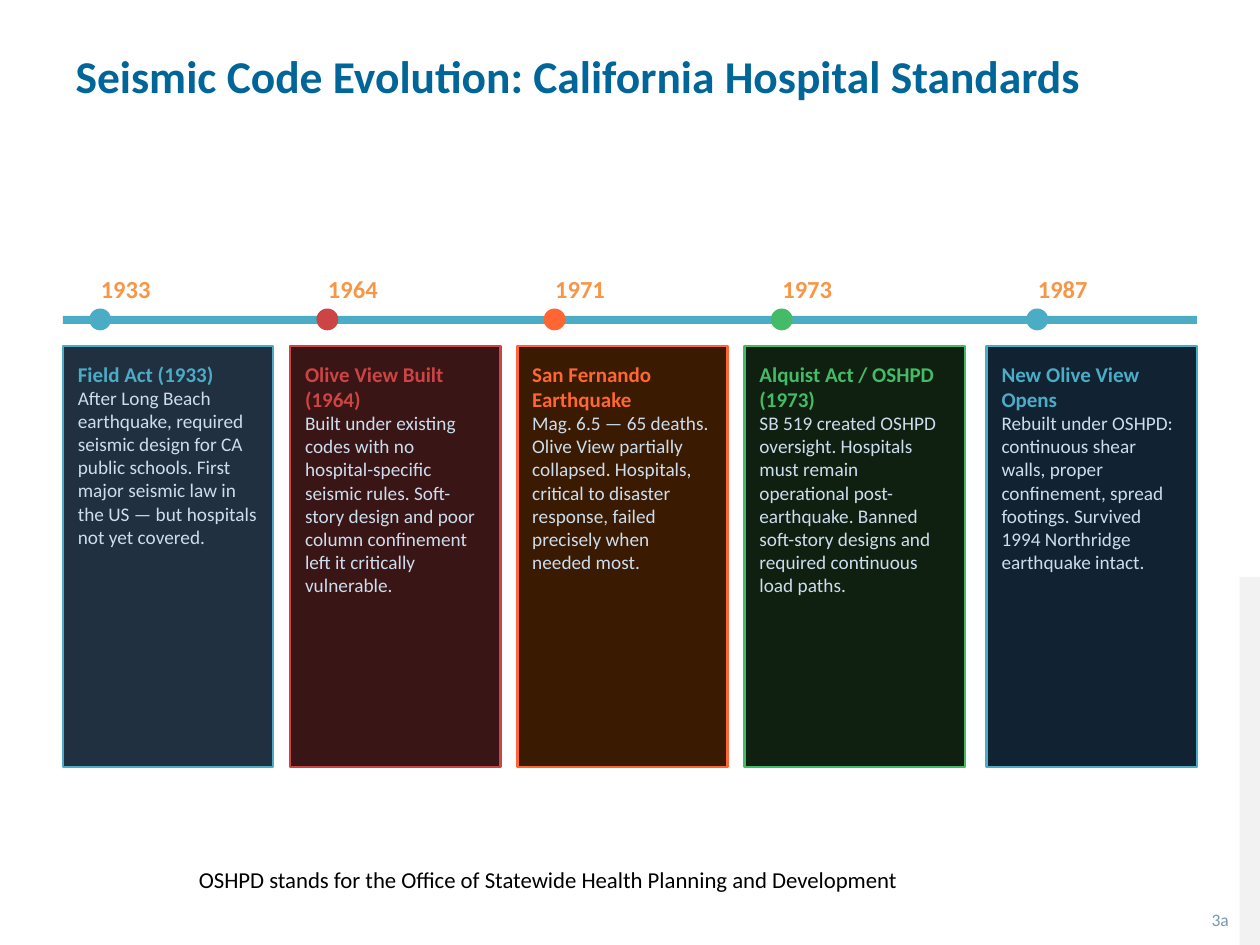
from pptx import Presentation
from pptx.dml.color import RGBColor
from pptx.enum.shapes import MSO_SHAPE
from pptx.enum.text import MSO_ANCHOR, MSO_AUTO_SIZE, PP_ALIGN
from pptx.util import Cm, Pt

RECT, OVAL = MSO_SHAPE.RECTANGLE, MSO_SHAPE.OVAL
TOP, MID = MSO_ANCHOR.TOP, MSO_ANCHOR.MIDDLE
LEFT, MIDDLE, RIGHT = PP_ALIGN.LEFT, PP_ALIGN.CENTER, PP_ALIGN.RIGHT

HUES = {
    "title": "006699", "band": "F2F2F2", "year": "F79646", "body": "CCDDEE",
    "note": "000000", "page": "7799AA", "teal": "4BACC6", "red": "CC4444",
    "orange": "FF6633", "green": "44BB66", "slate": "213040",
    "maroon": "3A1515", "brown": "3A1A00", "forest": "102010",
    "navy": "112233",
}

# Year, heading, body, accent, fill
EVENTS = [
    ("1933", "Field Act (1933)",
     "After Long Beach earthquake, required seismic design for CA public "
     "schools. First major seismic law in the US — but hospitals not yet "
     "covered.", "teal", "slate"),
    ("1964", "Olive View Built (1964)",
     "Built under existing codes with no hospital-specific seismic rules. "
     "Soft-story design and poor column confinement left it critically "
     "vulnerable.", "red", "maroon"),
    ("1971", "San Fernando Earthquake",
     "Mag. 6.5 — 65 deaths. Olive View partially collapsed. Hospitals, "
     "critical to disaster response, failed precisely when needed most.",
     "orange", "brown"),
    ("1973", "Alquist Act / OSHPD (1973)",
     "SB 519 created OSHPD oversight. Hospitals must remain operational "
     "post-earthquake. Banned soft-story designs and required continuous "
     "load paths.", "green", "forest"),
    ("1987", "New Olive View Opens",
     "Rebuilt under OSHPD: continuous shear walls, proper confinement, "
     "spread footings. Survived 1994 Northridge earthquake intact.",
     "teal", "navy"),
]
PITCH, CARD = 4.58, 4.24  # column step and card width, cm
WIDE = {3: 4.45}          # the card that is wider than the rest


def hue(name):
    return RGBColor.from_string(HUES[name])


def style(para, size, tint, bold=False, align=LEFT):
    para.alignment = align
    for run in para.runs:
        font = run.font
        font.name, font.size, font.bold = "Calibri", Pt(size), bold
        font.color.rgb = hue(tint)


def block(slide, kind, x, y, w, h, fill, edge=None):
    shape = slide.shapes.add_shape(kind, Cm(x), Cm(y), Cm(w), Cm(h))
    shape.shadow.inherit = False
    shape.fill.solid()
    shape.fill.fore_color.rgb = hue(fill)
    if edge:
        shape.line.color.rgb = hue(edge)
        shape.line.width = Pt(1.42)
    else:
        shape.line.fill.background()
    return shape


def label(slide, x, y, w, h, text, size, tint, bold=False, align=LEFT,
          anchor=TOP):
    box = slide.shapes.add_textbox(Cm(x), Cm(y), Cm(w), Cm(h))
    frame = box.text_frame
    frame.word_wrap = True
    frame.vertical_anchor = anchor
    frame.text = text
    style(frame.paragraphs[0], size, tint, bold, align)
    return frame


def header(slide, x, y, w, h):
    title = slide.shapes.title
    title.left, title.top, title.width, title.height = map(Cm, (x, y, w, h))
    frame = title.text_frame
    frame.text = "Seismic Code Evolution: California Hospital Standards"
    frame.auto_size = MSO_AUTO_SIZE.NONE
    frame.vertical_anchor = MID
    style(frame.paragraphs[0], 26, "title", True)


def card(slide, x, y, w, h, head, body, tint, fill):
    frame = block(slide, RECT, x, y, w, h, fill, tint).text_frame
    frame.word_wrap = True
    frame.vertical_anchor = TOP
    frame.margin_left = frame.margin_right = Cm(0.3)
    frame.margin_top = frame.margin_bottom = Cm(0.3)
    frame.text = head + "\n" + body
    first, second = frame.paragraphs
    style(first, 12, tint, True)
    style(second, 11, "body")


def timeline(slide, x, y, w, h):
    # Axis bar
    block(slide, RECT, x, y + 0.91, w, 0.16, "teal")
    last = len(EVENTS) - 1
    for i, (year, head, body, tint, fill) in enumerate(EVENTS):
        # The last card ends with the bar; its marker sits further in
        left = x + w - CARD if i == last else x + i * PITCH
        mark = left + (0.8 if i == last else 0.53)
        block(slide, OVAL, mark, y + 0.76, 0.44, 0.44, tint)
        label(slide, mark - 0.24, y, 1.95, 0.71, year, 14, "year",
              True, MIDDLE, MID)
        card(slide, left, y + 1.52, WIDE.get(i, CARD), h - 1.52,
             head, body, tint, fill)


def footer(slide, x, y, w, h):
    # Note and page number
    note = label(slide, x, y, 16.08, 0.86,
                 "OSHPD stands for the Office of Statewide Health Planning "
                 "and Development", 13, "note")
    note.auto_size = MSO_AUTO_SIZE.SHAPE_TO_FIT_TEXT
    label(slide, x + w - 1.4, y + h - 0.56, 1.4, 0.56, "3a", 10, "page",
          align=RIGHT)


def main():
    deck = Presentation()
    deck.slide_width, deck.slide_height = Cm(25.4), Cm(19.05)
    slide = deck.slides.add_slide(deck.slide_layouts[5])
    # Side band
    block(slide, RECT, 24.99, 11.63, 0.41, 7.42, "band")
    header(slide, 1.27, 0.79, 22.86, 1.45)
    timeline(slide, 1.27, 5.46, 22.86, 10)
    footer(slide, 3.76, 17.32, 21.26, 1.43)
    deck.save("out.pptx")


if __name__ == "__main__":
    main()
